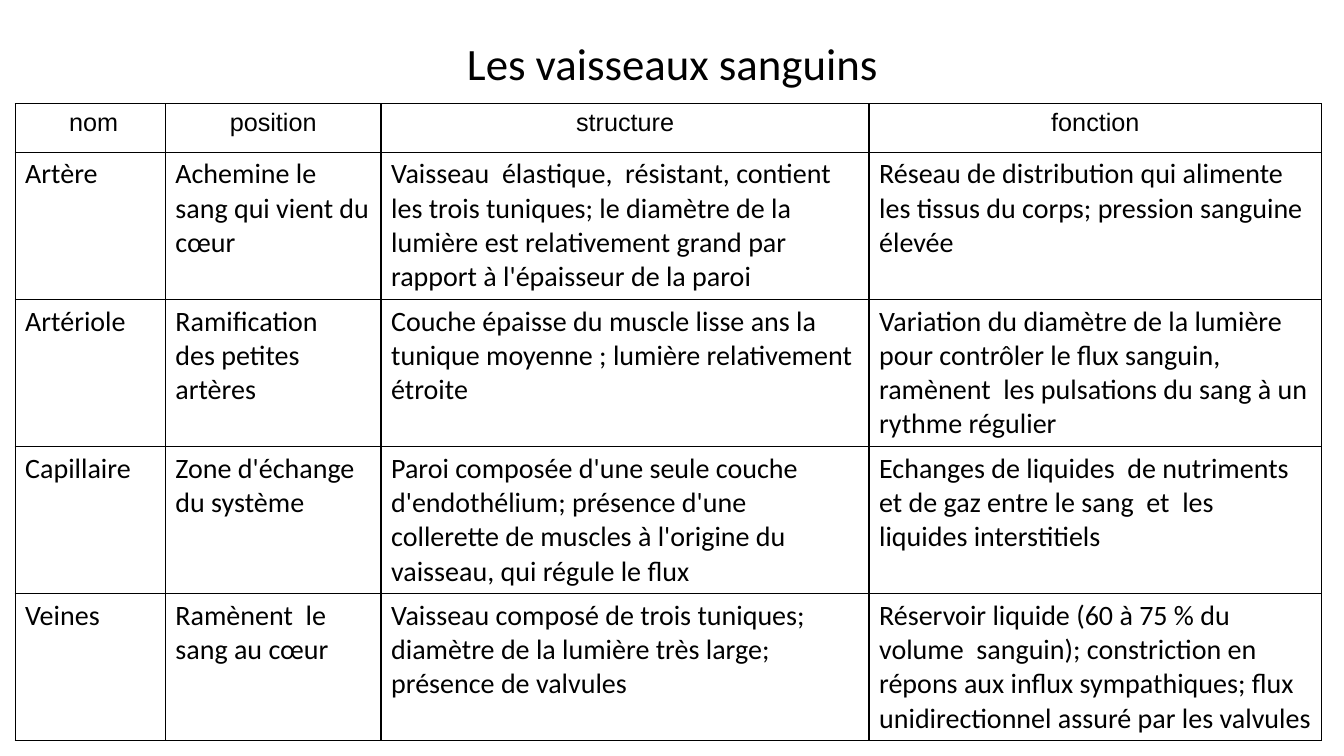
"""Builds a slide with a table comparing the types of blood vessels."""
from lxml.etree import SubElement
from pptx import Presentation
from pptx.dml.color import RGBColor
from pptx.enum.text import MSO_ANCHOR as Anchor, PP_ALIGN as Align
from pptx.oxml.ns import qn
from pptx.util import Inches, Pt

BLACK = RGBColor(0x00, 0x00, 0x00)
WHITE = RGBColor(0xFF, 0xFF, 0xFF)


def style(frame, size, font, align):
    for para in frame.paragraphs:
        para.alignment = align
        for run in para.runs:
            run.font.size = Pt(size)
            run.font.name = font
            run.font.color.rgb = BLACK


def border(cell):
    props = cell._tc.get_or_add_tcPr()
    for spot, side in enumerate(("a:lnL", "a:lnR", "a:lnT", "a:lnB")):
        line = SubElement(props, qn(side), w=str(Pt(1)))
        fill = SubElement(line, qn("a:solidFill"))
        SubElement(fill, qn("a:srgbClr"), val=str(BLACK))
        props.insert(spot, line)


deck = Presentation()
deck.slide_width = Inches(13.33)
deck.slide_height = Inches(7.5)
slide = deck.slides.add_slide(deck.slide_layouts[6])

title = slide.shapes.add_textbox(
    Inches(0.92), Inches(0.4), Inches(11.5), Inches(0.44)).text_frame
title.word_wrap = True
title.vertical_anchor = Anchor.MIDDLE
title.text = "Les vaisseaux sanguins"
style(title, 32, "Calibri", Align.CENTER)

rows = [
    (" nom", "position", "structure", "fonction"),
    ("Artère",
     "Achemine le sang qui vient du cœur",
     "Vaisseau  élastique,  résistant, contient les trois tuniques; "
     "le diamètre de la  lumière est relativement grand par  "
     "rapport à l'épaisseur de la paroi",
     "Réseau de distribution qui alimente les tissus du corps; "
     "pression sanguine élevée"),
    ("Artériole",
     "Ramification   des petites artères",
     "Couche épaisse du muscle lisse ans la tunique moyenne ; "
     "lumière relativement étroite",
     "Variation du diamètre de la lumière pour contrôler le flux sanguin,   "
     "ramènent  les pulsations du sang à un rythme régulier"),
    ("Capillaire",
     "Zone d'échange du système",
     "Paroi composée d'une seule couche d'endothélium; présence d'une "
     "collerette de muscles à l'origine du vaisseau, qui régule le flux",
     "Echanges de liquides  de nutriments et de gaz entre le sang  et  les   "
     "liquides interstitiels"),
    ("Veines",
     "Ramènent  le sang au cœur",
     "Vaisseau composé de trois tuniques; diamètre de la lumière très large; "
     "présence de valvules",
     "Réservoir liquide (60 à 75 % du  volume  sanguin); constriction en "
     "répons aux influx sympathiques; flux unidirectionnel assuré par les "
     "valvules"),
]
widths = [1.49, 2.14, 4.84, 4.49]
heights = [0.48] + [1.46] * 4

table = slide.shapes.add_table(
    len(rows), len(widths), Inches(0.15), Inches(1.03),
    Inches(sum(widths)), Inches(sum(heights))).table
table.first_row = False
table.horz_banding = False
for col, width in zip(table.columns, widths):
    col.width = Inches(width)
for row, height, texts in zip(table.rows, heights, rows):
    row.height = Inches(height)
    for cell, text in zip(row.cells, texts):
        cell.text_frame.text = text
        cell.fill.solid()
        cell.fill.fore_color.rgb = WHITE
        border(cell)
        if texts is rows[0]:
            style(cell.text_frame, 18, "Arial", Align.CENTER)
        else:
            style(cell.text_frame, 20, "Calibri", Align.LEFT)

deck.save("out.pptx")
